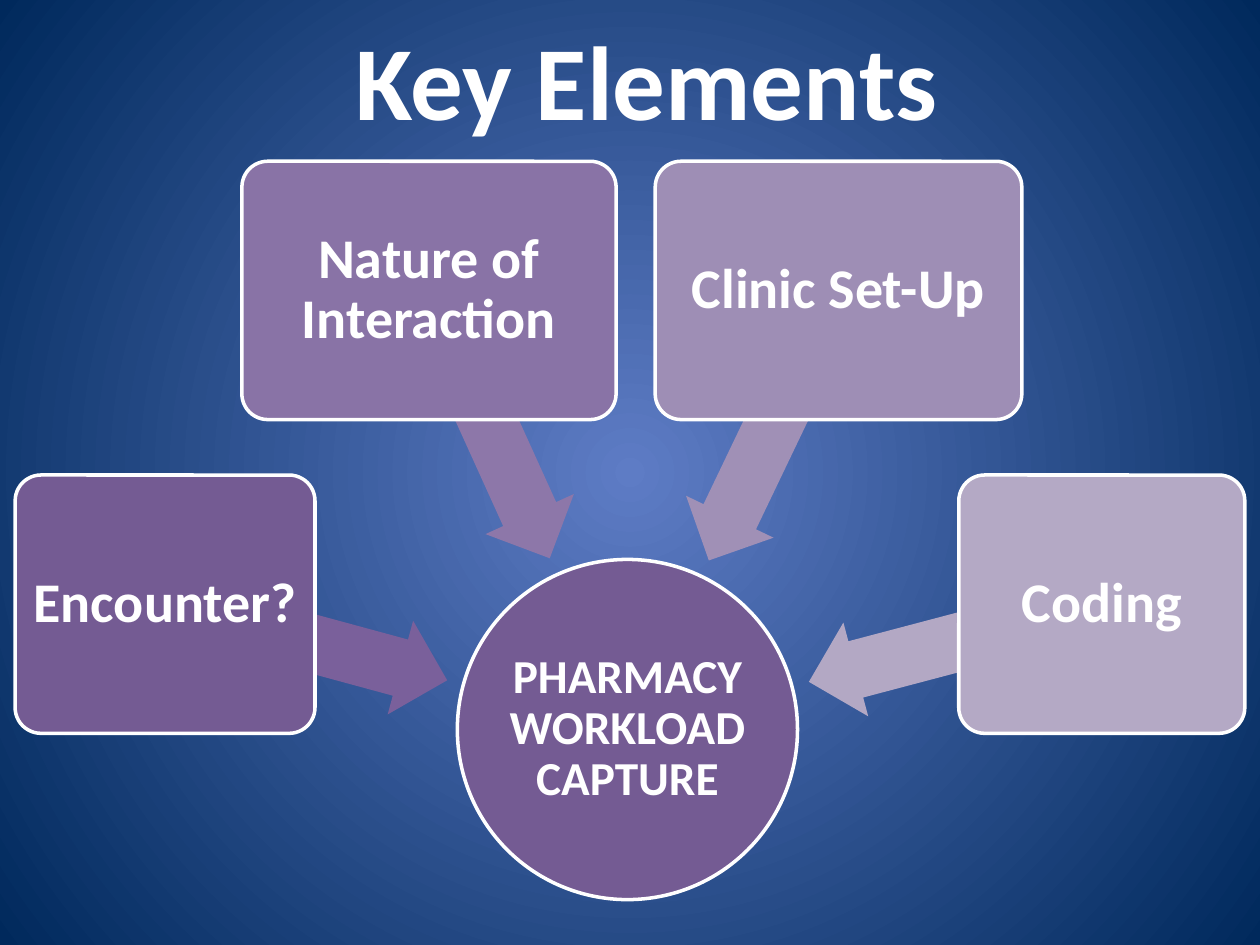
from lxml import etree
from pptx import Presentation
from pptx.dml.color import RGBColor
from pptx.enum import shapes, text
from pptx.oxml.ns import qn
from pptx.util import Inches, Pt

COLORS = {
    "white": "FFFFFF", "glow": "5E7CC5", "navy": "00295C", "hub": "745B93",
    "encounter": "745B93", "encounter arrow": "7A609B",
    "nature": "8973A6", "nature arrow": "8D77A9",
    "clinic": "9E8EB5", "clinic arrow": "A090B6",
    "coding": "B4A9C5", "coding arrow": "B3A8C4",
}
BOX_HEIGHT, ARROW_HEIGHT = 2.05, 0.77
UPPER_ROW, LOWER_ROW = 1.28, 3.77


def color(name):
    return RGBColor.from_string(COLORS[name])


def write_text(shape, wording, size, margin, line_spacing):
    """Centre bold white wording in the shape."""
    frame = shape.text_frame
    settings = {"word_wrap": True, "vertical_anchor": text.MSO_ANCHOR.MIDDLE}
    for side in ("left", "top", "right", "bottom"):
        settings[f"margin_{side}"] = Inches(margin)
    for name, value in settings.items():
        setattr(frame, name, value)
    paragraph = frame.paragraphs[0]
    paragraph.alignment = text.PP_ALIGN.CENTER
    paragraph.line_spacing = line_spacing
    run = paragraph.add_run()
    run.text = wording
    for name, value in {"name": "Calibri", "size": Pt(size), "bold": True}.items():
        setattr(run.font, name, value)
    run.font.color.rgb = color("white")


presentation = Presentation()
presentation.slide_width, presentation.slide_height = Inches(10), Inches(7.5)
slide = presentation.slides.add_slide(presentation.slide_layouts[6])

# Background glowing from the centre
background = slide.background.fill
background.gradient()
for stop, name, position in zip(background.gradient_stops, ("glow", "navy"), (0, 1)):
    stop.color.rgb = color(name)
    stop.position = position
gradient = slide.background._cSld.find(".//" + qn("a:gradFill"))
gradient.remove(gradient.find(qn("a:lin")))
radial = etree.SubElement(gradient, qn("a:path"), {"path": "circle"})
etree.SubElement(radial, qn("a:fillToRect"), dict.fromkeys("ltrb", "50000"))

# Central circle, then each arrow beneath its element box:
# key, wording, box (left, top, width), arrow (left, top, width), arrow rotation
elements = [
    ("encounter", "Encounter?", (0.12, LOWER_ROW, 2.38), (1.27, 4.71, 2.32), 195.2),
    ("nature", "Nature of Interaction", (1.92, UPPER_ROW, 2.97), (2.71, 2.98, 2.34), 245.6),
    ("clinic", "Clinic Set-Up", (5.2, UPPER_ROW, 2.91), (4.95, 2.99, 2.38), 295.6),
    ("coding", "Coding", (7.61, LOWER_ROW, 2.27), (6.38, 4.72, 2.4), 345.2),
]
kinds = shapes.MSO_SHAPE
parts = [(kinds.OVAL, "hub", (3.63, 4.44, 2.7, 2.7), [], 0,
          ("PHARMACY WORKLOAD CAPTURE", 27, 0.02, 0.9))]
for key, wording, box, arrow, rotation in elements:
    parts.append((kinds.LEFT_ARROW, f"{key} arrow", (*arrow, ARROW_HEIGHT),
                  [0.6, 0.5], rotation, None))
    parts.append((kinds.ROUNDED_RECTANGLE, key, (*box, BOX_HEIGHT),
                  [0.1], 0, (wording, 32, 0.07, 0.9)))

for kind, fill, bounds, adjustments, rotation, label in parts:
    shape = slide.shapes.add_shape(kind, *map(Inches, bounds))
    shape.shadow.inherit = False
    shape.rotation = rotation
    for index, value in enumerate(adjustments):
        shape.adjustments[index] = value
    shape.fill.solid()
    shape.fill.fore_color.rgb = color(fill)
    if label:
        shape.line.color.rgb = color("white")
        shape.line.width = Pt(2)
        write_text(shape, *label)
    else:
        shape.line.fill.background()

title = slide.shapes.add_textbox(Inches(0.67), Inches(0.08), Inches(8.92), Inches(1.08))
write_text(title, "Key Elements", 60, 0.05, 1.0)

presentation.save("out.pptx")
